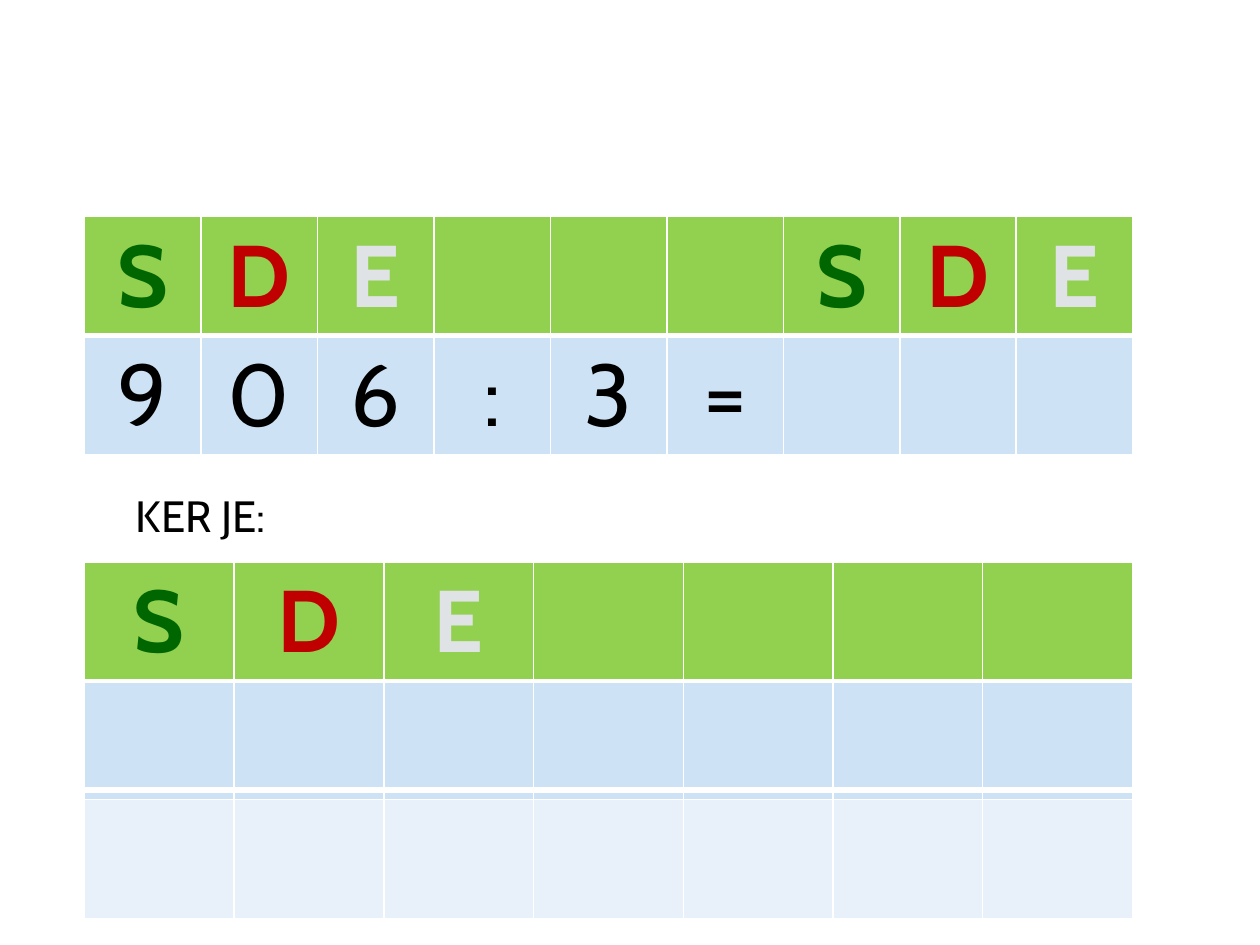
from dataclasses import dataclass

from lxml.etree import SubElement
from pptx import Presentation
from pptx.dml.color import RGBColor
from pptx.enum.shapes import MSO_CONNECTOR
from pptx.enum.text import MSO_AUTO_SIZE, PP_ALIGN
from pptx.oxml.ns import qn
from pptx.util import Inches, Pt


@dataclass(frozen=True)
class Theme:
    font: str = "Cabin"
    digit_size: int = 50
    label_size: int = 25
    text: str = "000000"
    rule: str = "FFFFFF"
    header: str = "92D050"
    bands: tuple = ("CDE3F5", "E8F1FA")
    thin: int = 1
    thick: int = 3


PLACE_COLOURS = {"S": "006600", "D": "C00000", "E": "DFE3E5"}


class Board:
    """Places elements on a grid of 100 columns by 100 rows."""

    def __init__(self, prs, theme):
        self.prs, self.theme = prs, theme
        self.s = prs.slides.add_slide(prs.slide_layouts[6])

    def x(self, cols):
        return round(self.prs.slide_width * cols / 100)

    def y(self, rows):
        return round(self.prs.slide_height * rows / 100)

    def box(self, left, top, width, height):
        return self.x(left), self.y(top), self.x(width), self.y(height)

    def set_text(self, tf, text, size, colour, bold=False, align=PP_ALIGN.LEFT):
        p = tf.paragraphs[0]
        p.alignment = align
        r = p.add_run()
        r.text = text
        formats = {"name": self.theme.font, "size": Pt(size), "bold": bold}
        for key, value in formats.items():
            setattr(r.font, key, value)
        r.font.color.rgb = RGBColor.from_string(colour)

    def borders(self, cell, top, bottom):
        tc_pr = cell._tc.get_or_add_tcPr()
        thin = self.theme.thin
        for side, width in {"L": thin, "R": thin, "T": top, "B": bottom}.items():
            ln = SubElement(tc_pr, qn(f"a:ln{side}"), w=str(Pt(width)))
            fill = SubElement(ln, qn("a:solidFill"))
            SubElement(fill, qn("a:srgbClr"), val=self.theme.rule)

    def place_table(self, left, top, width, row_height, rows):
        """Draw a place-value table; the first row is the header."""
        t = self.theme
        n_rows, n_cols = len(rows), len(rows[0])
        frame = self.s.shapes.add_table(
            n_rows, n_cols, *self.box(left, top, width, row_height * n_rows))
        table = frame.table
        for col in table.columns:
            col.width = self.x(width / n_cols)
        for i, texts in enumerate(rows):
            table.rows[i].height = self.y(row_height)
            is_header = i == 0
            fill = t.header if is_header else t.bands[i - 1]
            for j, text in enumerate(texts):
                cell = table.cell(i, j)
                self.borders(cell, t.thick if i == 1 else t.thin,
                             t.thick if is_header else t.thin)
                cell.fill.solid()
                cell.fill.fore_color.rgb = RGBColor.from_string(fill)
                if text.strip():
                    colour = PLACE_COLOURS.get(text, t.text)
                    self.set_text(cell.text_frame, text, t.digit_size, colour,
                                  is_header, PP_ALIGN.CENTER)

    def label(self, left, top, width, height, text):
        tf = self.s.shapes.add_textbox(*self.box(left, top, width, height)).text_frame
        tf.word_wrap = True
        tf.auto_size = MSO_AUTO_SIZE.SHAPE_TO_FIT_TEXT
        self.set_text(tf, text, self.theme.label_size, self.theme.text)

    def rule(self, left, right, row):
        sp = self.s.shapes.add_connector(
            MSO_CONNECTOR.STRAIGHT, self.x(left), self.y(row), self.x(right), self.y(row))
        sp.line.color.rgb = RGBColor.from_string(self.theme.rule)
        sp.line.width = Pt(self.theme.thick)
        SubElement(sp._element.spPr, qn("a:effectLst"))


def main():
    prs = Presentation()
    prs.slide_width, prs.slide_height = Inches(10), Inches(7.5)
    board = Board(prs, Theme())
    left, width, row_height = 6.7, 83.2, 12.58

    # Division to solve: one character per cell
    board.place_table(left, 22.93, width, row_height, ["SDE   SDE", "906:3=   "])

    # Working area, its rows still empty
    empty = [""] * 7
    board.place_table(left, 59.47, width, row_height,
                      [["S", "D", "E", *empty[3:]], empty, empty])
    board.label(9.8, 51.07, 18.7, 6.93, "KER JE:")
    board.rule(5.1, 93.3, 83.6)

    prs.save("out.pptx")


if __name__ == "__main__":
    main()
